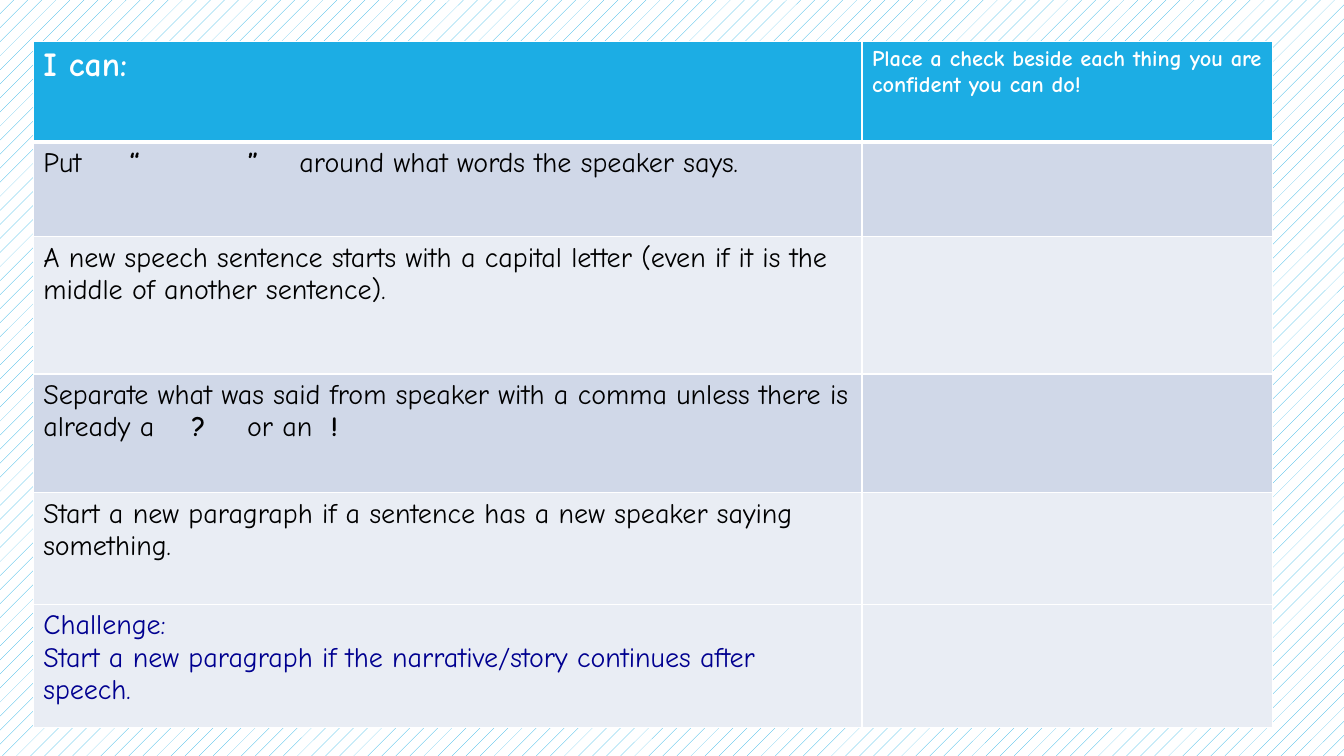
import pptx
import pptx.dml.color
import pptx.enum.dml
import pptx.oxml
import pptx.oxml.ns
import pptx.util
from dataclasses import dataclass

Inches = pptx.util.Inches

# A cell is a list of paragraphs; a paragraph is a list of (text, bold) runs.
HEADINGS = [
    ("I can:", 24),
    ("Place a check beside each thing you are confident you can do!", 16),
]
SKILLS = [
    [[("Put\t", False), ("“\t”\t", True),
      ("around what words the speaker says.", False)]],
    [[("A new speech sentence starts with a capital letter "
       "(even if it is the middle of another sentence).", False)]],
    [[("Separate what was said from speaker with a comma unless there is "
       "already a\t", False), ("?\t", True), ("or an\t", False), ("!", True)]],
    [[("Start a new paragraph if a sentence has a new speaker saying "
       "something.", False)]],
    [[("Challenge:", False)],
     [("Start a new paragraph if the narrative/story continues after "
       "speech.", False)]],
]
TAB_STOPS = {0: [0.85, 2.03, 2.54], 2: [1.47, 2.02, 2.85]}
CHALLENGE_ROW = len(SKILLS)
COLUMN_WIDTHS = [8.22, 4.07]
ROW_HEIGHTS = [1, 0.94, 1.36, 1.18, 1.11, 1.22]
TABLE_LEFT, TABLE_TOP = 0.33, 0.41


@dataclass
class Theme:
    font: str = "Comic Neue"
    accent: str = "1CADE4"
    white: str = "FFFFFF"
    text: str = "000000"
    challenge: str = "000090"
    bands: tuple = ("D0D8E8", "E9EDF4")
    body_size: int = 20
    thin: int = 1
    thick: int = 3


THEME = Theme()


def rgb(value):
    return pptx.dml.color.RGBColor.from_string(value)


def add_text(p, text, size=THEME.body_size, color=THEME.text, bold=False):
    r = p.add_run()
    r.text = text
    r.font.name = THEME.font
    r.font.size = pptx.util.Pt(size)
    r.font.bold = bold
    r.font.color.rgb = rgb(color)


def set_tabs(p, stops):
    """Set left tab stops, in inches from the left of the text."""
    tabs = "".join(f'<a:tab pos="{Inches(x)}" algn="l"/>' for x in stops)
    xml = f'<a:tabLst {pptx.oxml.ns.nsdecls("a")}>{tabs}</a:tabLst>'
    p._p.get_or_add_pPr().append(pptx.oxml.parse_xml(xml))


def style_cell(cell, fill, top, bottom):
    cell.fill.solid()
    cell.fill.fore_color.rgb = rgb(fill)
    widths = {"L": THEME.thin, "R": THEME.thin, "T": top, "B": bottom}
    tc_pr = cell._tc.get_or_add_tcPr()
    for i, (side, width) in enumerate(widths.items()):
        tc_pr.insert(i, pptx.oxml.parse_xml(
            f'<a:ln{side} {pptx.oxml.ns.nsdecls("a")} '
            f'w="{pptx.util.Pt(width)}"><a:solidFill>'
            f'<a:srgbClr val="{THEME.white}"/></a:solidFill></a:ln{side}>'))


def set_background(s):
    fill = s.background.fill
    fill.patterned()
    fill.pattern = pptx.enum.dml.MSO_PATTERN.PERCENT_5
    fill.fore_color.rgb = rgb(THEME.accent)
    fill.back_color.rgb = rgb(THEME.white)


def fill_skill(cell, paragraphs, color, stops):
    tf = cell.text_frame
    for i, runs in enumerate(paragraphs):
        p = tf.add_paragraph() if i else tf.paragraphs[0]
        if stops:
            set_tabs(p, stops)
        for text, bold in runs:
            add_text(p, text, color=color, bold=bold)


def add_checklist(s):
    table = s.shapes.add_table(
        len(ROW_HEIGHTS), len(COLUMN_WIDTHS),
        Inches(TABLE_LEFT), Inches(TABLE_TOP),
        Inches(sum(COLUMN_WIDTHS)), Inches(sum(ROW_HEIGHTS))).table
    for column, width in zip(table.columns, COLUMN_WIDTHS):
        column.width = Inches(width)
    for i, (row, height) in enumerate(zip(table.rows, ROW_HEIGHTS)):
        row.height = Inches(height)
        if i == 0:
            fill = THEME.accent
        elif i == CHALLENGE_ROW:
            fill = THEME.bands[1]
        else:
            fill = THEME.bands[(i - 1) % 2]
        for cell in row.cells:
            style_cell(cell, fill,
                       top=THEME.thick if i == 1 else THEME.thin,
                       bottom=THEME.thick if i == 0 else THEME.thin)
    for cell, (text, size) in zip(table.rows[0].cells, HEADINGS):
        add_text(cell.text_frame.paragraphs[0], text, size=size,
                 color=THEME.white, bold=True)
    for i, paragraphs in enumerate(SKILLS):
        color = THEME.challenge if i + 1 == CHALLENGE_ROW else THEME.text
        fill_skill(table.cell(i + 1, 0), paragraphs, color, TAB_STOPS.get(i))


def main():
    prs = pptx.Presentation()
    prs.slide_width, prs.slide_height = Inches(13.33), Inches(7.5)
    s = prs.slides.add_slide(prs.slide_layouts[6])
    set_background(s)
    add_checklist(s)
    prs.save("out.pptx")


if __name__ == "__main__":
    main()
